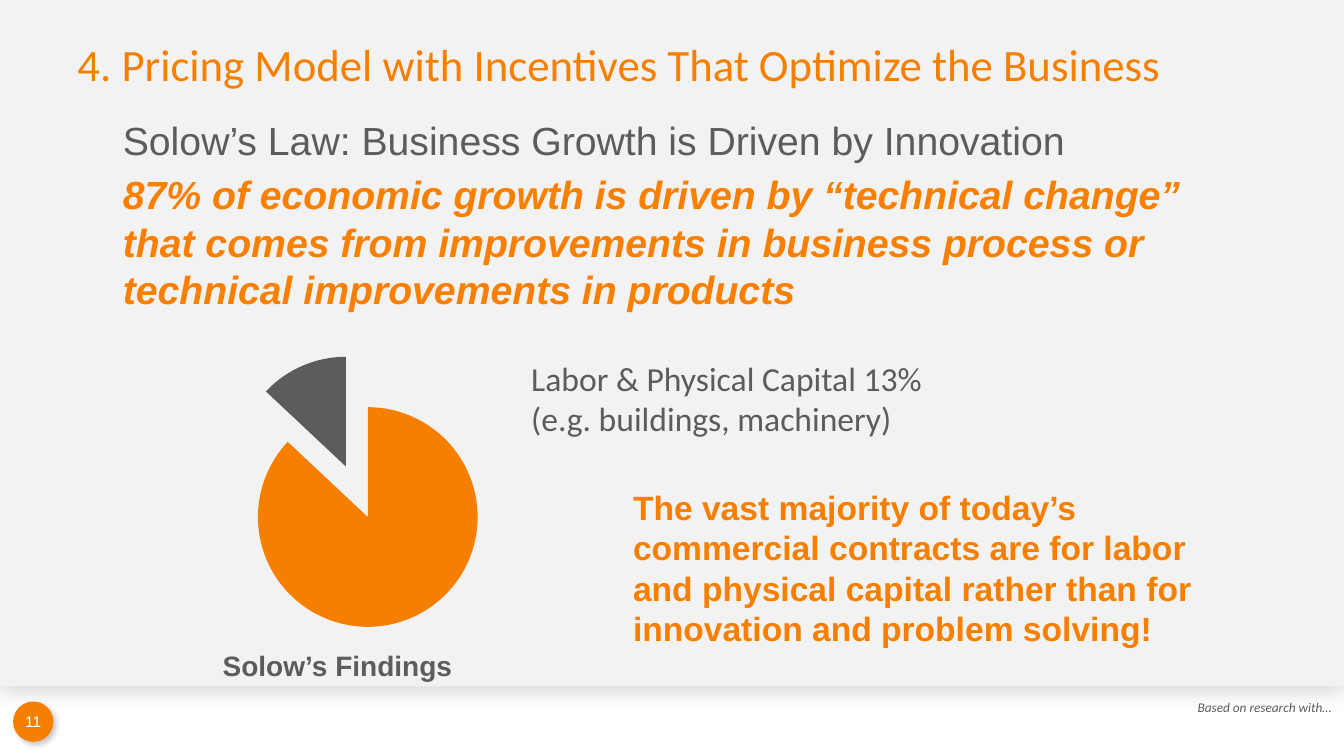
from lxml import etree
from pptx import Presentation, util as u
from pptx.chart.data import CategoryChartData
from pptx.dml.color import RGBColor
from pptx.enum import chart as charts, shapes, text
from pptx.oxml import ns

PX = u.Inches(1) // 100
ORANGE = RGBColor(0xF7, 0x7F, 0x00)
BRIGHT_ORANGE = RGBColor(0xF8, 0x7F, 0x00)
GRAY = RGBColor(0x5C, 0x5C, 0x5C)
PANEL = RGBColor(0xF2, 0xF2, 0xF2)
WHITE = RGBColor(0xFF, 0xFF, 0xFF)


def emu(box):
    return [length * PX for length in box]


def add_shadow(shape, opacity, blur, distance, angle):
    """Cast a black shadow: opacity in percent, lengths in points, angle in degrees."""
    shape.shadow.inherit = False
    effects = shape._element.spPr.find(ns.qn("a:effectLst"))
    shadow = etree.SubElement(
        effects, ns.qn("a:outerShdw"), blurRad=str(u.Pt(blur)),
        dist=str(u.Pt(distance)), dir=str(angle * 60000), algn="ctr", rotWithShape="0")
    color = etree.SubElement(shadow, ns.qn("a:srgbClr"), val="000000")
    etree.SubElement(color, ns.qn("a:alpha"), val=str(opacity * 1000))


def add_filled_shape(slide, kind, box, color):
    shape = slide.shapes.add_shape(kind, *emu(box))
    shape.fill.solid()
    shape.fill.fore_color.rgb = color
    shape.line.fill.background()
    return shape


def style(paragraph, name, size, color, bold=False, italic=False):
    font = paragraph.font
    font.name, font.size, font.color.rgb = name, u.Pt(size), color
    font.bold, font.italic = bold, italic


def add_text(slide, box, content, *look, wrap=True, anchor=text.MSO_ANCHOR.TOP, **flags):
    frame = slide.shapes.add_textbox(*emu(box)).text_frame
    frame.word_wrap = wrap
    frame.vertical_anchor = anchor
    frame.text = content
    for paragraph in frame.paragraphs:
        style(paragraph, *look, **flags)
    return frame


def add_background(slide, box):
    """Gray panel with the footer strip beneath it: page badge and source note."""
    left, top, width, height = box
    panel = add_filled_shape(slide, shapes.MSO_SHAPE.RECTANGLE, box, PANEL)
    add_shadow(panel, 15, 14, 5, 90)

    bottom = top + height
    badge = add_filled_shape(slide, shapes.MSO_SHAPE.OVAL,
                             (left + 13, bottom + 15, 40, 40), ORANGE)
    add_shadow(badge, 22, 4, 3, 45)
    frame = badge.text_frame
    frame.margin_left = frame.margin_right = 0
    frame.word_wrap = False
    frame.text = "11"
    frame.paragraphs[0].alignment = text.PP_ALIGN.CENTER
    style(frame.paragraphs[0], "Arial", 11, WHITE)

    add_text(slide, (left + width - 155, bottom + 8, 154, 26), "Based on research with…",
             "Calibri", 9.5, GRAY, italic=True, wrap=False)


def add_law(slide, box):
    frame = add_text(slide, box, "Solow’s Law: Business Growth is Driven by Innovation",
                     "Arial", 28, GRAY)
    finding = frame.add_paragraph()
    finding.text = ("87% of economic growth is driven by “technical change” that comes from "
                    "improvements in business process or technical improvements in products")
    finding.space_before = u.Pt(5.6)
    style(finding, "Arial", 28, BRIGHT_ORANGE, bold=True, italic=True)


def add_growth_pie(slide, box):
    """Exploded pie with its caption below."""
    left, top, width, height = box
    data = CategoryChartData()
    data.categories = ["1", "2"]
    data.add_series("Series 1", (87, 13))
    chart = slide.shapes.add_chart(charts.XL_CHART_TYPE.PIE, *emu(box), data).chart
    chart.has_title = chart.has_legend = False
    chart.font.name, chart.font.size = "Calibri", u.Pt(10)
    chart.font.color.rgb = GRAY
    plot = chart.plots[0]
    plot.vary_by_categories = True
    series = plot.series[0]
    explosion = etree.Element(ns.qn("c:explosion"), val="25")
    series._element.find(ns.qn("c:tx")).addnext(explosion)
    for index, color in enumerate((ORANGE, GRAY)):
        slice_format = series.points[index].format
        slice_format.fill.solid()
        slice_format.fill.fore_color.rgb = color
        slice_format.line.fill.background()

    add_text(slide, (left + 107, top + height, 255, 44), "Solow’s Findings",
             "Arial", 20, GRAY, bold=True, wrap=False)


def add_commentary(slide, box):
    """Label of the small slice, and the conclusion indented below it."""
    left, top, width, height = box
    add_text(slide, (left, top, 459, 91),
             "Labor & Physical Capital 13%\n(e.g. buildings, machinery)",
             "Calibri", 24, GRAY)
    add_text(slide, (left + 101, top + 128, width - 101, height - 128),
             "The vast majority of today’s commercial contracts are for labor and physical "
             "capital rather than for innovation and problem solving!",
             "Arial", 24, ORANGE, bold=True)


def build_slide(presentation):
    slide = presentation.slides.add_slide(presentation.slide_layouts[6])
    add_background(slide, (0, 0, 1333, 681))
    add_text(slide, (67, 20, 1200, 86),
             "4. Pricing Model with Incentives That Optimize the Business",
             "Calibri", 32, ORANGE, anchor=text.MSO_ANCHOR.MIDDLE)
    add_law(slide, (112, 110, 1105, 203))
    add_growth_pie(slide, (104, 338, 500, 300))
    add_commentary(slide, (517, 350, 700, 300))


def main():
    presentation = Presentation()
    presentation.slide_width, presentation.slide_height = emu((1333, 750))
    build_slide(presentation)
    presentation.save("out.pptx")


if __name__ == "__main__":
    main()
